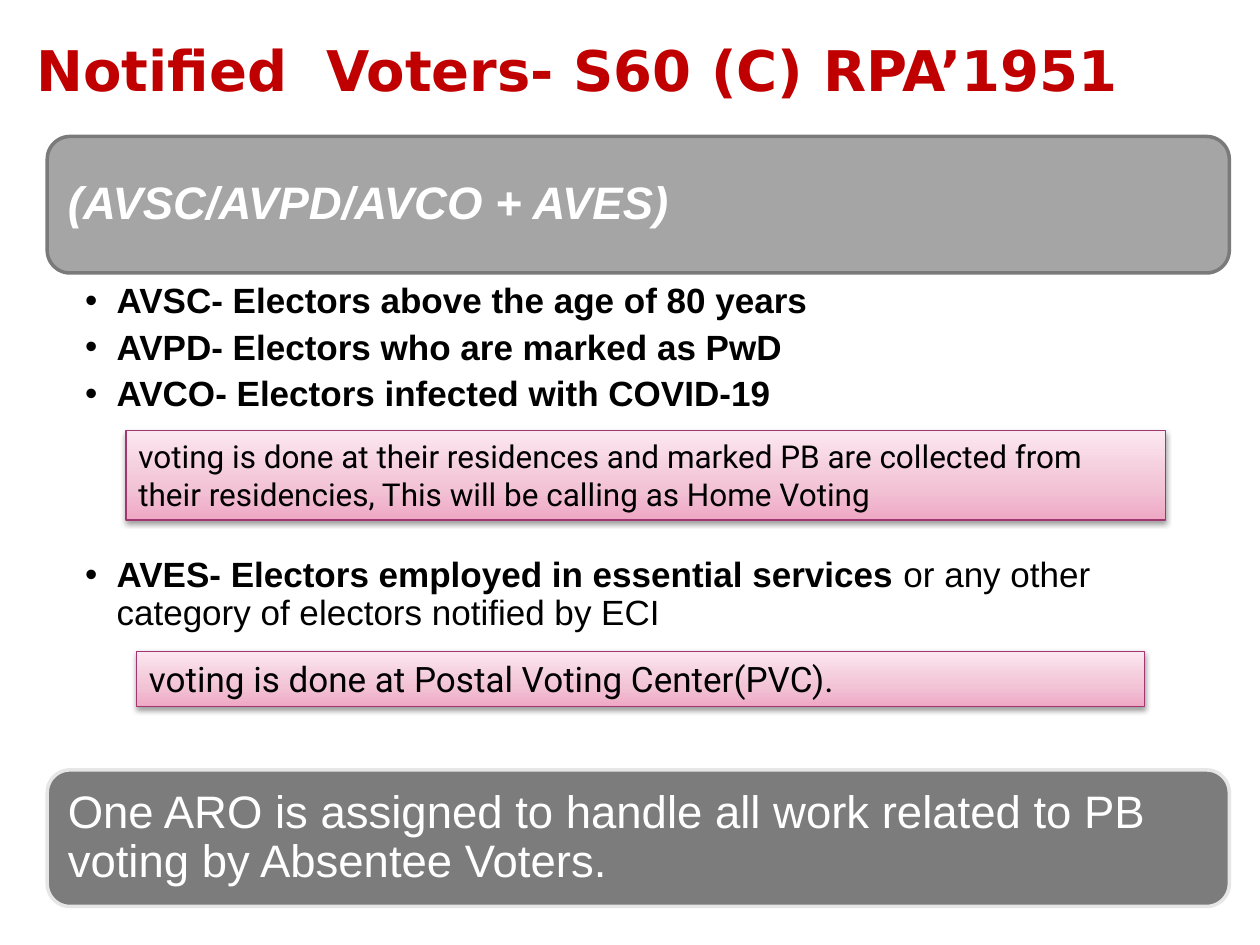
from lxml import etree
from pptx import Presentation
from pptx.dml.color import RGBColor
from pptx.enum.shapes import MSO_SHAPE
from pptx.enum.text import MSO_ANCHOR, MSO_AUTO_SIZE, PP_ALIGN
from pptx.oxml import parse_xml
from pptx.util import Pt

ROUNDED, RECT = MSO_SHAPE.ROUNDED_RECTANGLE, MSO_SHAPE.RECTANGLE
TOP, MIDDLE = MSO_ANCHOR.TOP, MSO_ANCHOR.MIDDLE
NS = "http://schemas.openxmlformats.org/drawingml/2006/main"

COLORS = {
    "title": "C00000", "text": "000000", "light": "FFFFFF",
    "header": "A5A5A5", "header_line": "7A7A7A",
    "footer": "7C7C7C", "footer_line": "E7E6E6",
    "note_line": "A13770",
}
NOTE_STOPS = [(0, "EFA8C4"), (35, "F2C2D5"), (100, "FBE7EF")]

# Content: a paragraph is a list of (text, bold) runs
TITLE = "Notified  Voters- S60 (C) RPA’1951"
BULLETS = [
    [("AVSC- Electors above the age of 80 years", True)],
    [("AVPD- Electors who are marked as PwD", True)],
    [("AVCO- Electors infected with COVID-19", True)],
    [("AVES- Electors employed in essential services ", True),
     ("or any other category of electors notified by ECI", False)],
]
BULLET_GAPS = [0, 0, 0, 77]  # room for the first note before the last bullet
BARS = [  # text, top, fill, line, bold italic
    ("(AVSC/AVPD/AVCO + AVES)", 78, "header", "header_line", True),
    ("One ARO is assigned to handle all work related to PB voting by "
     "Absentee Voters.", 440, "footer", "footer_line", False),
]
NOTES = [  # text, box, size
    ("voting is done at their residences and marked PB are collected from "
     "their residencies, This will be calling as Home Voting",
     (72, 246.2, 594, 51), 18),
    ("voting is done at Postal Voting Center(PVC).",
     (78, 372.2, 576, 31.7), 20),
]
LEFT, WIDTH, BAR_HEIGHT = 27, 675.5, 78


def rgb(name):
    return RGBColor.from_string(COLORS[name])


def place(s, x, y, w, h):
    s.left, s.top, s.width, s.height = Pt(x), Pt(y), Pt(w), Pt(h)


def frame(s, anchor, insets):
    tf = s.text_frame
    tf.word_wrap, tf.auto_size = True, MSO_AUTO_SIZE.NONE
    tf.vertical_anchor = anchor
    (tf.margin_left, tf.margin_top,
     tf.margin_right, tf.margin_bottom) = map(Pt, insets)
    return tf


def write(p, text, *, size, font="Arial", color="text", bold=False,
          italic=False, spacing=0.9, before=0, after=0):
    p.alignment, p.line_spacing = PP_ALIGN.LEFT, spacing
    p.space_before, p.space_after = Pt(before), Pt(after)
    r = p.add_run()
    r.text = text
    r.font.size, r.font.name = Pt(size), font
    r.font.bold, r.font.italic = bold, italic
    r.font.color.rgb = rgb(color)


def add_box(shapes, kind, box, line, line_width):
    s = shapes.add_shape(kind, *map(Pt, box))
    s.shadow.inherit = False
    s.line.color.rgb, s.line.width = rgb(line), Pt(line_width)
    return s


def style_note(s):
    """Three-stop vertical gradient and a soft shadow below."""
    s.fill.gradient()
    s.fill.gradient_angle = 90
    spPr = s.element.spPr
    stops = spPr.find(f"{{{NS}}}gradFill/{{{NS}}}gsLst")
    for stop in list(stops):
        stops.remove(stop)
    for pos, color in NOTE_STOPS:
        gs = etree.SubElement(stops, f"{{{NS}}}gs", pos=str(pos * 1000))
        etree.SubElement(gs, f"{{{NS}}}srgbClr", val=color)
    spPr.find(f"{{{NS}}}effectLst").append(parse_xml(
        f'<a:outerShdw xmlns:a="{NS}" blurRad="39370" dist="20320" '
        'dir="5400000" rotWithShape="0"><a:srgbClr val="000000">'
        '<a:alpha val="38000"/></a:srgbClr></a:outerShdw>'))


def main():
    prs = Presentation()
    prs.slide_width, prs.slide_height = Pt(720), Pt(540)
    slide = prs.slides.add_slide(prs.slide_layouts[1])
    shapes = slide.shapes

    # Title
    place(shapes.title, 13.7, 12.2, 692.6, 60)
    tf = frame(shapes.title, MIDDLE, (7.2, 3.6, 7.2, 3.6))
    write(tf.paragraphs[0], TITLE, size=32, font="DejaVu Sans",
          color="title", bold=True)

    # Bullet list
    body = slide.placeholders[1]
    place(body, LEFT, 159, WIDTH, 250)
    tf = frame(body, TOP, (21.6, 2.9, 14.4, 2.9))
    for i, (runs, gap) in enumerate(zip(BULLETS, BULLET_GAPS)):
        p = tf.add_paragraph() if i else tf.paragraphs[0]
        pPr = p._p.get_or_add_pPr()
        pPr.set("marL", str(Pt(18)))
        pPr.set("indent", str(-Pt(18)))
        for text, bold in runs:
            write(p, text, size=20, bold=bold, before=gap, after=5)

    # Header and footer bars
    for text, top, fill, line, strong in BARS:
        s = add_box(shapes, ROUNDED, (LEFT, top, WIDTH, BAR_HEIGHT), line, 2)
        s.fill.solid()
        s.fill.fore_color.rgb = rgb(fill)
        tf = frame(s, MIDDLE, (8, 8, 8, 8))
        write(tf.paragraphs[0], text, size=26, color="light",
              bold=strong, italic=strong)

    # Pink notes
    for text, box, size in NOTES:
        s = add_box(shapes, RECT, box, "note_line", 0.75)
        style_note(s)
        tf = frame(s, TOP, (7.2, 3.6, 7.2, 3.6))
        write(tf.paragraphs[0], text, size=size, font="Roboto", spacing=1.0)

    prs.save("out.pptx")


if __name__ == "__main__":
    main()
